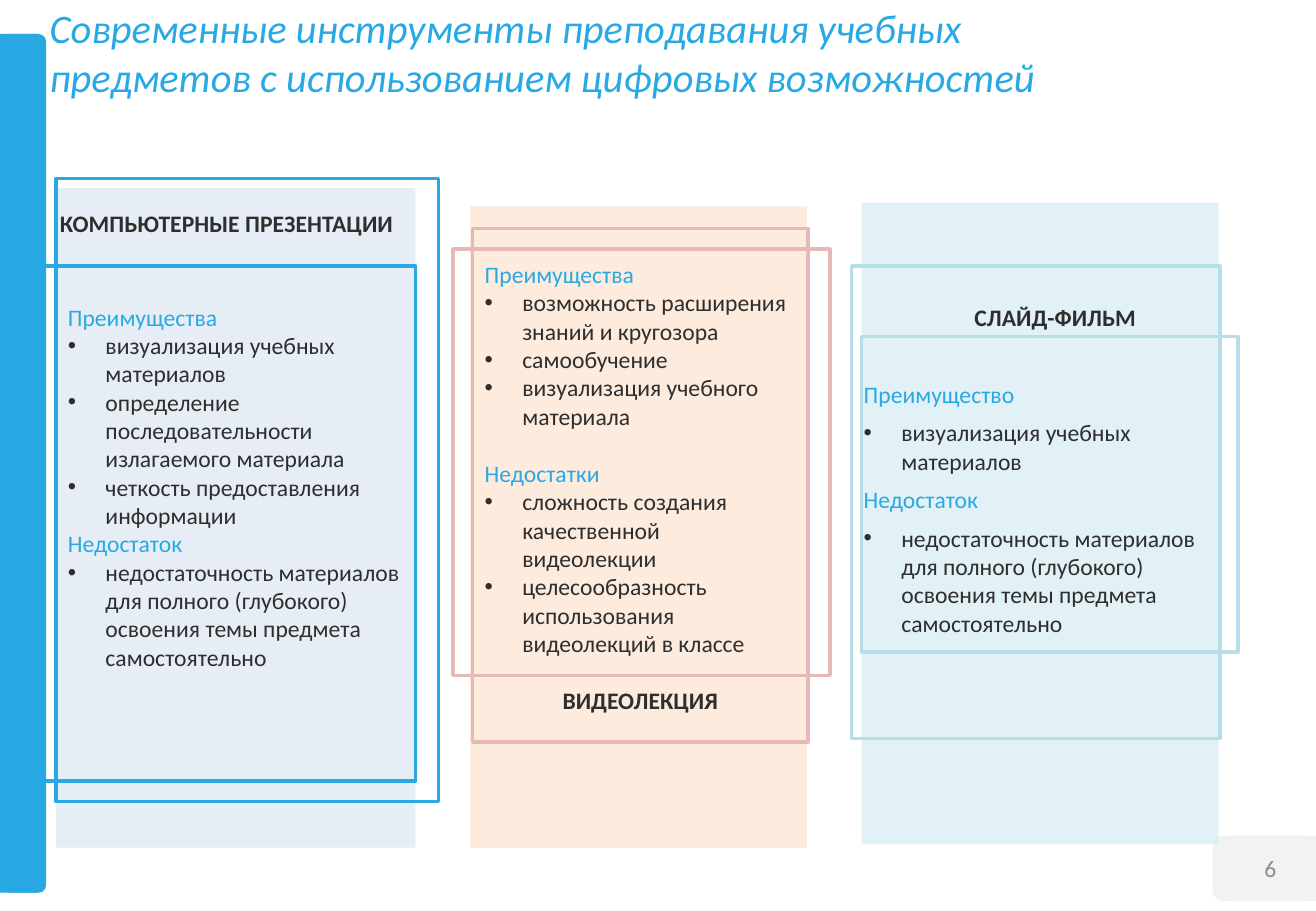
import pptx
import pptx.util
import pptx.dml.color
import pptx.enum.shapes
import pptx.enum.text
import pptx.oxml.ns
from dataclasses import dataclass
from lxml import etree

Inches, Pt = pptx.util.Inches, pptx.util.Pt
RGB = pptx.dml.color.RGBColor.from_string
Shape = pptx.enum.shapes.MSO_SHAPE
Anchor = pptx.enum.text.MSO_ANCHOR
Align = pptx.enum.text.PP_ALIGN
qn = pptx.oxml.ns.qn


@dataclass(frozen=True)
class Theme:
    font: str = "Calibri"
    title_size: int = 24
    body_size: int = 14
    accent: str = "29A9E3"
    text: str = "2E2E2E"
    number: str = "8C8C8C"
    number_tab: str = "F2F2F2"
    blue_panel: str = "DCE6F2"
    peach_panel: str = "FDEADA"
    teal_panel: str = "DBEEF4"
    pink_line: str = "E6B9B8"
    teal_line: str = "B7DEE8"


theme = Theme()
deck = pptx.Presentation()
deck.slide_width, deck.slide_height = Inches(10.83), Inches(7.5)
slide = deck.slides.add_slide(deck.slide_layouts[6])


def add_block(kind, box, fill=None, line=None, opacity=100):
    block = slide.shapes.add_shape(kind, *map(Inches, box))
    block.shadow.inherit = False
    if fill:
        block.fill.solid()
        block.fill.fore_color.rgb = RGB(fill)
        if opacity < 100:
            color = block.fill._xPr.find(".//" + qn("a:srgbClr"))
            etree.SubElement(color, qn("a:alpha"), val=str(opacity * 1000))
    else:
        block.fill.background()
    if line:
        block.line.color.rgb = RGB(line)
        block.line.width = Pt(2)
    else:
        block.line.fill.background()
    return block


def write(paragraph, text, color, size=theme.body_size, bold=False, italic=False):
    paragraph.text = text
    font = paragraph.runs[0].font
    font.name, font.size, font.bold, font.italic = theme.font, Pt(size), bold, italic
    font.color.rgb = RGB(color)


# Page-number tab and side bar
for kind, box, fill in [
    (Shape.ROUNDED_RECTANGLE, (9.98, 6.88, 0.82, 0.54), theme.number_tab),
    (Shape.RECTANGLE, (10.14, 6.88, 0.69, 0.54), theme.number_tab),
    (Shape.ROUNDED_RECTANGLE, (0.01, 0.28, 0.37, 7.07), theme.accent),
    (Shape.RECTANGLE, (0, 0.28, 0.31, 7.07), theme.accent),
]:
    add_block(kind, box, fill)

# Tinted column panels
for box, fill, opacity in [
    ((0.46, 1.55, 2.96, 5.43), theme.blue_panel, 70),
    ((7.09, 1.67, 2.94, 5.28), theme.teal_panel, 80),
    ((3.87, 1.7, 2.77, 5.28), theme.peach_panel, 90),
]:
    add_block(Shape.RECTANGLE, box, fill, opacity=opacity)

# Title, page number and first column heading
for box, text, color, size, bold, italic, align, anchor, wrap in [
    ((0.31, 0, 8.73, 0.85),
     "Современные инструменты преподавания учебных предметов с использованием цифровых возможностей",
     theme.accent, theme.title_size, False, True, Align.LEFT, Anchor.MIDDLE, True),
    ((10.11, 6.95, 0.69, 0.4), "6",
     theme.number, theme.body_size, False, False, Align.CENTER, Anchor.MIDDLE, True),
    ((0.38, 1.67, 2.97, 0.34), "КОМПЬЮТЕРНЫЕ ПРЕЗЕНТАЦИИ",
     theme.text, theme.body_size, True, False, Align.CENTER, Anchor.TOP, False),
]:
    frame = slide.shapes.add_textbox(*map(Inches, box)).text_frame
    frame.word_wrap, frame.vertical_anchor = wrap, anchor
    write(frame.paragraphs[0], text, color, size, bold, italic)
    frame.paragraphs[0].alignment = align

# Column frames: each entry is (role, text, space before in points)
shortage = "недостаточность материалов для полного (глубокого) освоения темы предмета самостоятельно"
columns = [
    ((0.46, 1.47, 3.15, 5.13), theme.accent, 1.02, 0, [
        ("label", "Преимущества", 0),
        ("item", "визуализация учебных материалов", 0),
        ("item", "определение последовательности излагаемого материала", 0),
        ("item", "четкость предоставления информации", 0),
        ("label", "Недостаток", 0),
        ("item", shortage, 0),
    ]),
    ((3.89, 1.88, 2.76, 4.23), theme.pink_line, 0.26, 0, [
        ("label", "Преимущества", 0),
        ("item", "возможность расширения знаний и кругозора", 0),
        ("item", "самообучение", 0),
        ("item", "визуализация учебного материала", 0),
        ("label", "Недостатки", 17),
        ("item", "сложность создания качественной видеолекции", 0),
        ("item", "целесообразность использования видеолекций в классе", 0),
        ("heading", "ВИДЕОЛЕКЦИЯ", 17),
    ]),
    ((7.01, 2.19, 3.03, 3.89), theme.teal_line, 0.3, 0.32, [
        ("heading", "СЛАЙД-ФИЛЬМ", 0),
        ("label", "Преимущество", 29),
        ("item", "визуализация учебных материалов", 6),
        ("label", "Недостаток", 6),
        ("item", shortage, 6),
    ]),
]
for box, line, top_inset, heading_shift, entries in columns:
    frame = add_block(Shape.RECTANGLE, box, line=line).text_frame
    frame.word_wrap, frame.vertical_anchor = True, Anchor.TOP
    frame.margin_top = Inches(top_inset)
    for index, (role, text, gap) in enumerate(entries):
        paragraph = frame.add_paragraph() if index else frame.paragraphs[0]
        paragraph.alignment = Align.CENTER if role == "heading" else Align.LEFT
        properties = paragraph._p.get_or_add_pPr()
        if role == "item":
            properties.set("marL", str(Inches(0.31)))
            properties.set("indent", str(-Inches(0.31)))
            etree.SubElement(properties, qn("a:buFont"), typeface="Arial")
            etree.SubElement(properties, qn("a:buChar"), char="•")
        elif role == "heading" and heading_shift:
            properties.set("marL", str(Inches(heading_shift)))
        paragraph.space_before = Pt(gap)
        write(paragraph, text, theme.accent if role == "label" else theme.text,
              bold=role == "heading")

# Offset outlines
for box, line in [
    ((3.73, 2.05, 3.1, 3.51), theme.pink_line),
    ((7.09, 2.77, 3.1, 2.6), theme.teal_line),
    ((0.32, 2.19, 3.1, 4.24), theme.accent),
]:
    add_block(Shape.RECTANGLE, box, line=line)

deck.save("out.pptx")
